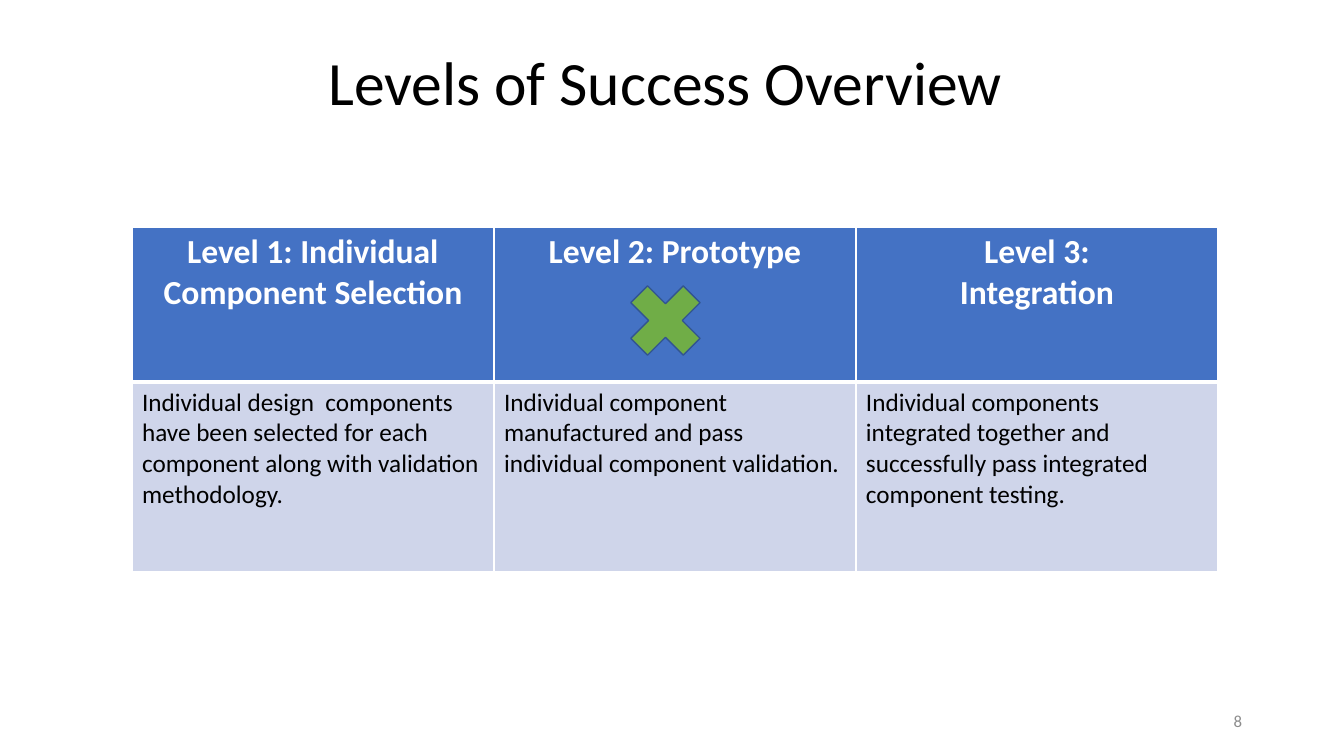
from lxml.etree import SubElement
from pptx import Presentation
from pptx.dml.color import RGBColor
from pptx.enum.shapes import MSO_SHAPE
from pptx.enum.text import MSO_ANCHOR, PP_ALIGN
from pptx.oxml.ns import qn
from pptx.util import Pt

PX = 914400 / 100.8
COLORS = {
    "black": "000000",
    "white": "FFFFFF",
    "gray": "8C8C8C",
    "header": "4472C4",
    "body": "CFD5EA",
    "cross": "70AD47",
    "outline": "325491",
}


def px(*lengths):
    return [round(length * PX) for length in lengths]


def write(frame, text, size, color, align=PP_ALIGN.LEFT, bold=False,
          anchor=MSO_ANCHOR.TOP, spacing=1.0):
    frame.word_wrap = True
    frame.vertical_anchor = anchor
    frame.text = text
    for paragraph in frame.paragraphs:
        paragraph.alignment = align
        paragraph.line_spacing = spacing
        paragraph.font.name = "Calibri"
        paragraph.font.size = Pt(size)
        paragraph.font.bold = bold
        paragraph.font.color.rgb = RGBColor.from_string(COLORS[color])


presentation = Presentation()
presentation.slide_width, presentation.slide_height = px(1344, 756)
slide = presentation.slides.add_slide(presentation.slide_layouts[6])

# Title
title = slide.shapes.add_textbox(*px(86, 13, 1159, 146))
write(title.text_frame, "Levels of Success Overview", 44, "black",
      align=PP_ALIGN.CENTER, anchor=MSO_ANCHOR.MIDDLE, spacing=0.9)

# Table of levels
levels = [
    ("Level 1: Individual Component Selection",
     "Individual design  components have been selected for each component "
     "along with validation methodology."),
    ("Level 2: Prototype",
     "Individual component manufactured and pass individual component "
     "validation."),
    ("Level 3:\nIntegration",
     "Individual components integrated together and successfully pass "
     "integrated component testing."),
]
table = slide.shapes.add_table(2, len(levels), *px(132, 227, 1086, 345)).table
for row, height in zip(table.rows, px(155, 190)):
    row.height = height
for column, level in enumerate(levels):
    for row, text in enumerate(level):
        cell = table.cell(row, column)
        header = row == 0
        # White borders, thicker between the two rows
        properties = cell._tc.get_or_add_tcPr()
        for side in ("lnL", "lnR", "lnT", "lnB"):
            thick = side == ("lnB" if header else "lnT")
            line = SubElement(properties, qn(f"a:{side}"), w=str(Pt(3 if thick else 1)))
            fill = SubElement(line, qn("a:solidFill"))
            SubElement(fill, qn("a:srgbClr"), val=COLORS["white"])
        cell.fill.solid()
        cell.fill.fore_color.rgb = RGBColor.from_string(COLORS["header" if header else "body"])
        if header:
            write(cell.text_frame, text, 24, "white", align=PP_ALIGN.CENTER, bold=True)
        else:
            write(cell.text_frame, text, 18, "black")

# Slide number
number = slide.shapes.add_textbox(*px(950, 701, 302, 40))
write(number.text_frame, "8", 12, "gray", align=PP_ALIGN.RIGHT, anchor=MSO_ANCHOR.MIDDLE)

# Cross marking the current level
cross = slide.shapes.add_shape(MSO_SHAPE.MATH_MULTIPLY, *px(615, 270, 101, 101))
cross.shadow.inherit = False
cross.fill.solid()
cross.fill.fore_color.rgb = RGBColor.from_string(COLORS["cross"])
cross.line.color.rgb = RGBColor.from_string(COLORS["outline"])
cross.line.width = Pt(1)

presentation.save("out.pptx")
